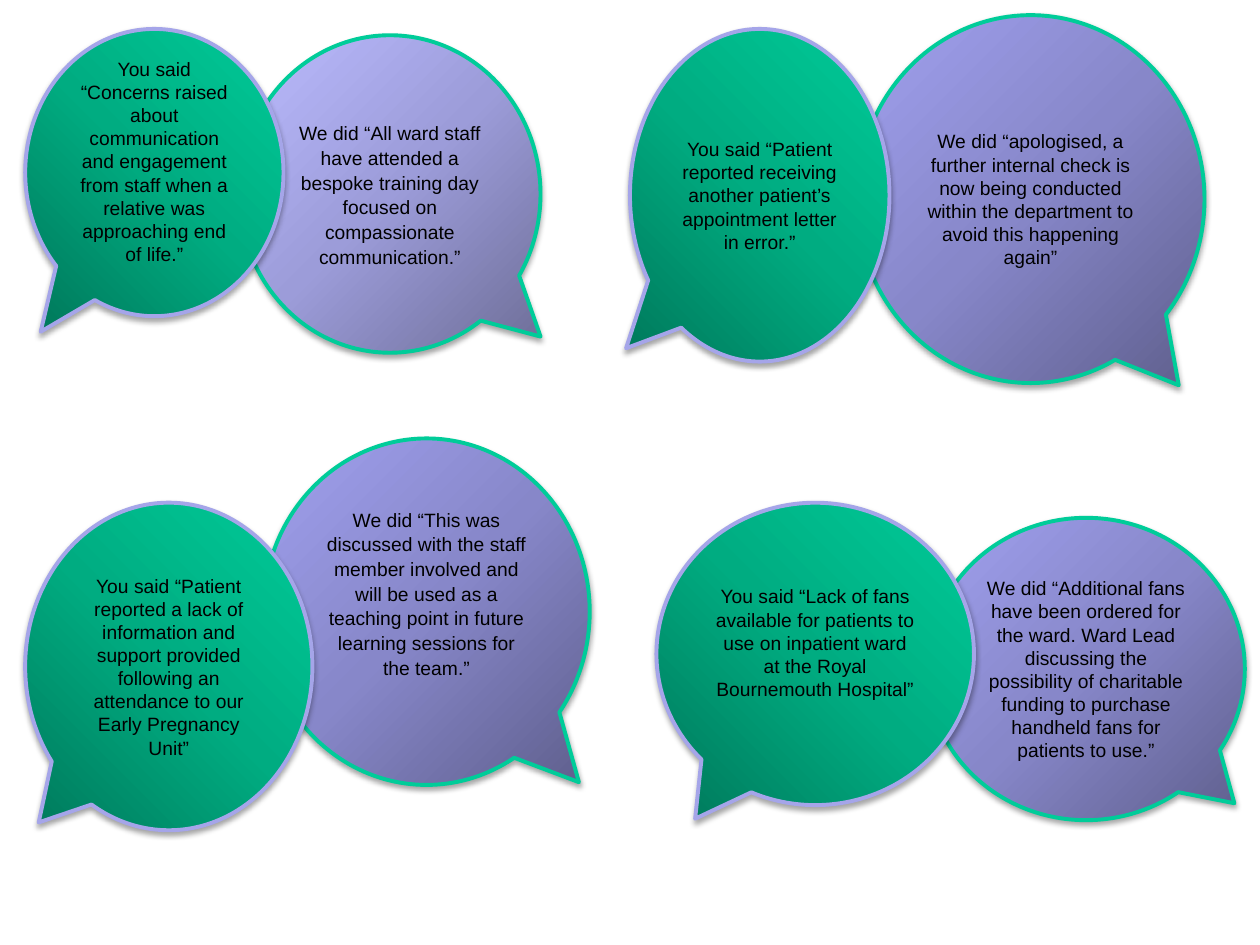
from pptx import Presentation
from pptx.dml.color import RGBColor
from pptx.enum.shapes import MSO_SHAPE
from pptx.enum.text import MSO_ANCHOR, PP_ALIGN
from pptx.oxml import parse_xml
from pptx.oxml.ns import nsdecls
from pptx.util import Inches, Pt

BLACK = RGBColor(0x00, 0x00, 0x00)
GREEN = RGBColor(0x00, 0xCC, 0x99)
LILAC = RGBColor(0xA5, 0xA5, 0xE9)

# Gradient colours from the tail corner outwards
GREENS = [RGBColor(0x00, 0x79, 0x5B), RGBColor(0x00, 0xAC, 0x81), GREEN]
PURPLES = [RGBColor(0x5F, 0x5F, 0x8D), RGBColor(0x87, 0x87, 0xC9),
           RGBColor(0xA0, 0xA0, 0xEE)]
PALES = [RGBColor(0x6E, 0x6E, 0x98), RGBColor(0x9C, 0x9C, 0xD9),
         RGBColor(0xBB, 0xBB, 0xFF)]


def shade(shape, tones, focus):
    """Fill with a round gradient centred on one corner."""
    stops = "".join(
        f'<a:gs pos="{n * 50000}"><a:srgbClr val="{tone}"/></a:gs>'
        for n, tone in enumerate(tones))
    grad = parse_xml(
        f'<a:gradFill {nsdecls("a")} rotWithShape="1"><a:gsLst>{stops}</a:gsLst>'
        f'<a:path path="circle"><a:fillToRect {focus}/></a:path></a:gradFill>')
    shape._element.spPr.prstGeom.addnext(grad)


def drop(shape):
    """Give a soft shadow straight below."""
    shape.shadow.inherit = False
    shape._element.spPr.effectLst.append(parse_xml(
        f'<a:outerShdw {nsdecls("a")} blurRad="{Pt(3.1)}" dist="{Pt(1.8)}" '
        'dir="5400000" rotWithShape="0"><a:srgbClr val="000000">'
        '<a:alpha val="35000"/></a:srgbClr></a:outerShdw>'))


def write(shape, text, lead=None, lift=0.0, size=11, color=BLACK):
    """Write centred text; lift adds room below it."""
    frame = shape.text_frame
    frame.word_wrap = True
    frame.vertical_anchor = MSO_ANCHOR.MIDDLE
    frame.margin_bottom = Inches(0.05 + lift)
    para = frame.paragraphs[0]
    para.alignment = PP_ALIGN.CENTER
    if lead:
        para.line_spacing = lead
    run = para.add_run()
    run.text = text
    run.font.name = "Arial"
    run.font.size = Pt(size)
    run.font.color.rgb = color


def bubble(slide, box, tail, tones, edge, focus, text, **form):
    shape = slide.shapes.add_shape(
        MSO_SHAPE.OVAL_CALLOUT, *(Inches(n) for n in box))
    shape.adjustments[0], shape.adjustments[1] = tail
    shade(shape, tones, focus)
    shape.line.color.rgb = edge
    shape.line.width = Pt(2.25)
    drop(shape)
    write(shape, text, **form)


def said(slide, box, tail, text, **form):
    bubble(slide, box, tail, GREENS, LILAC, 't="100000" r="100000"',
           f"You said “{text}”", **form)


def did(slide, box, tail, text, tones=PURPLES, **form):
    bubble(slide, box, tail, tones, GREEN, 'l="100000" t="100000"',
           f"We did “{text}", **form)


def main():
    deck = Presentation()
    deck.slide_width, deck.slide_height = Inches(10), Inches(7.5)
    slide = deck.slides.add_slide(deck.slide_layouts[6])

    # Replies, behind the comments
    did(slide, (7.36, 4.11, 2.52, 2.4), (0.467, 0.444),
        "Additional fans have been ordered for the ward. Ward Lead discussing "
        "the possibility of charitable funding to purchase handheld fans for "
        "patients to use.”")
    did(slide, (2.09, 3.48, 2.59, 2.75), (0.467, 0.492),
        "This was discussed with the staff member involved and will be used "
        "as a teaching point in future learning sessions for the team.”",
        lead=1.07, lift=0.3)
    did(slide, (1.9, 0.28, 2.39, 2.52), (0.5, 0.449),
        "All ward staff have attended a bespoke training day focused on "
        "compassionate communication.”", tones=PALES, lead=1.07)
    did(slide, (6.8, 0.12, 2.76, 2.92), (0.426, 0.506),
        "apologised, a further internal check is now being conducted within "
        "the department to avoid this happening again”")

    # Patient comments
    said(slide, (0.2, 3.99, 2.28, 2.6), (-0.453, 0.476),
         "Patient reported a lack of information and support provided "
         "following an attendance to our Early Pregnancy Unit")
    said(slide, (5.21, 3.99, 2.52, 2.4), (-0.378, 0.545),
         "Lack of fans available for patients to use on inpatient ward at "
         "the Royal Bournemouth Hospital", lift=0.18)
    said(slide, (5, 0.23, 2.06, 2.64), (-0.515, 0.46),
         "Patient reported receiving another patient’s appointment letter "
         "in error.")
    said(slide, (0.2, 0.23, 2.05, 2.28), (-0.44, 0.554),
         "Concerns raised about communication and engagement from staff when "
         "a relative was approaching end of life.", lift=0.18)

    deck.save("out.pptx")


if __name__ == "__main__":
    main()
